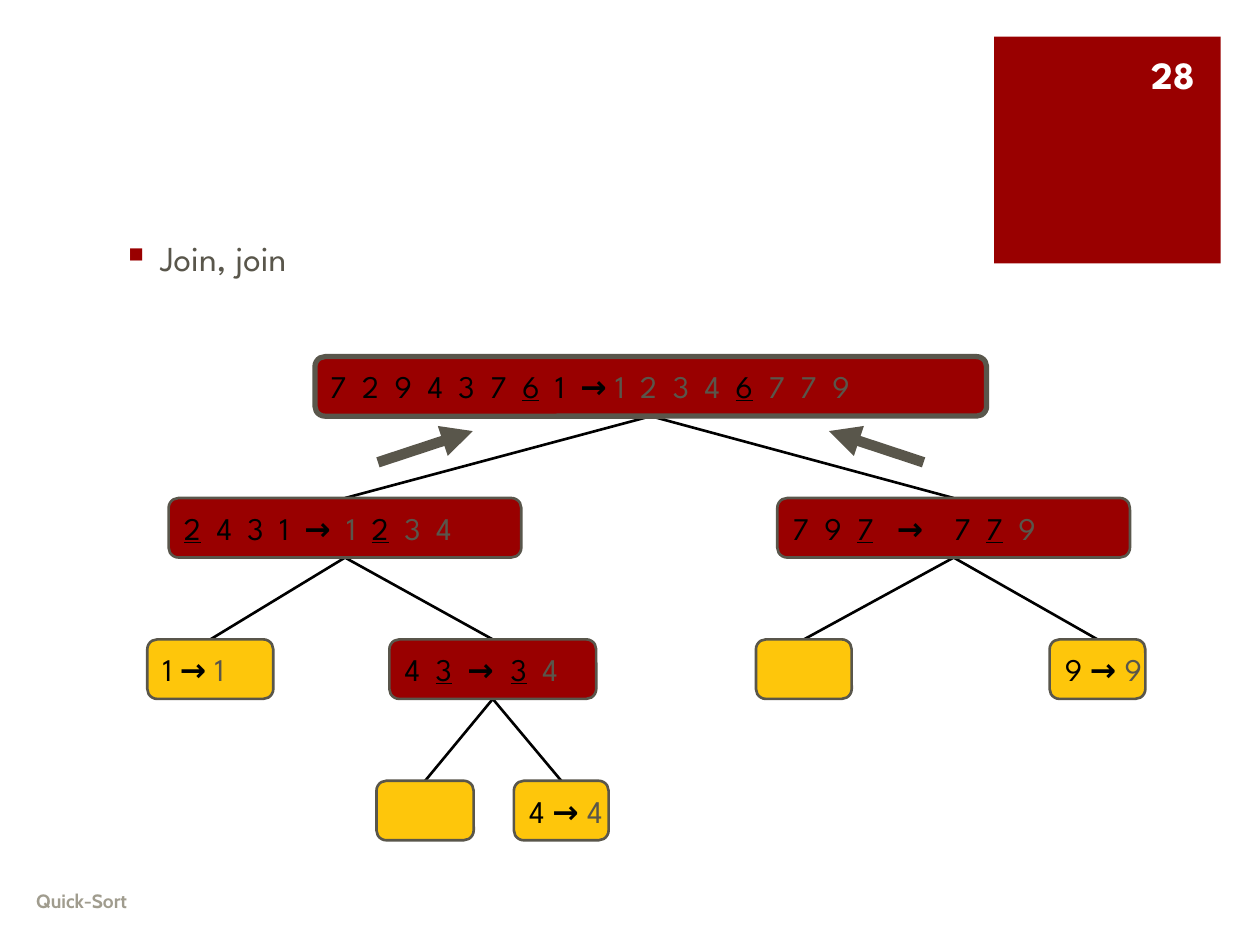
from lxml.etree import SubElement
from pptx import Presentation
from pptx.dml.color import RGBColor
from pptx.enum.shapes import MSO_CONNECTOR, MSO_SHAPE
from pptx.enum.text import MSO_ANCHOR, PP_ALIGN
from pptx.oxml.ns import qn
from pptx.util import Cm, Pt

RED = RGBColor(0x99, 0x00, 0x00)
GOLD = RGBColor(0xFE, 0xC6, 0x0B)
GREY = RGBColor(0x59, 0x56, 0x4B)
PALE = RGBColor(0xA0, 0x9C, 0x8E)
BLACK = RGBColor(0, 0, 0)
WHITE = RGBColor(0xFF, 0xFF, 0xFF)
BODY_FONT = "League Spartan"

# Tree layout in centimetres
ROW_STEP = 2.85
NODE_HEIGHT = 1.2

# Run formats inside the nodes
PLAIN = {"color": BLACK}
PIVOT = {"color": BLACK, "underline": True}
ARROW = {"color": BLACK, "bold": True}
SORTED = {"color": GREY}


def leaf(digit):
    return [(f"{digit} ", PLAIN), ("→ ", ARROW), (digit, SORTED)]


# Name: (parent, row, left, width, fill, runs)
NODES = {
    "root": (None, 0, 3.38, 13.54, RED, [
        ("7  2  9  4  3  7  ", PLAIN), ("6", PIVOT), ("  1  ", PLAIN), ("→ ", ARROW),
        ("1  2  3  4  ", SORTED), ("6", PIVOT), ("  7  7  9", SORTED)]),
    "low": ("root", 1, 0.43, 7.11, RED, [
        ("2", PIVOT), ("  4  3  1  ", PLAIN), ("→", ARROW), ("  1  ", SORTED),
        ("2", PIVOT), ("  3  4", SORTED)]),
    "high": ("root", 1, 12.7, 7.11, RED, [
        ("7  9  ", PLAIN), ("7", PIVOT), ("   ", PLAIN), ("→", ARROW),
        ("    7  ", PLAIN), ("7", PIVOT), ("  9", SORTED)]),
    "one": ("low", 2, 0, 2.54, GOLD, leaf("1")),
    "middle": ("low", 2, 4.88, 4.17, RED, [
        ("4  ", PLAIN), ("3", PIVOT), ("  ", PLAIN), ("→  ", ARROW),
        ("3", PIVOT), ("  4", SORTED)]),
    "high empty": ("high", 2, 12.27, 1.93, GOLD, []),
    "nine": ("high", 2, 18.19, 1.93, GOLD, leaf("9")),
    "middle empty": ("middle", 3, 4.62, 1.96, GOLD, []),
    "four": ("middle", 3, 7.39, 1.91, GOLD, leaf("4")),
}


def add_span(para, text, size=18, font=BODY_FONT, color=BLACK, bold=False, underline=False):
    span = para.add_run()
    span.text = text
    span.font.size = Pt(size)
    span.font.name = font
    span.font.color.rgb = color
    span.font.bold = bold
    span.font.underline = underline


def add_label(page, box, text, anchor=MSO_ANCHOR.MIDDLE, align=PP_ALIGN.LEFT, **style):
    frame = page.shapes.add_textbox(*map(Cm, box)).text_frame
    frame.word_wrap = True
    frame.vertical_anchor = anchor
    para = frame.paragraphs[0]
    para.alignment = align
    add_span(para, text, **style)
    return para


def add_panel(page, kind, box, fill):
    panel = page.shapes.add_shape(kind, *map(Cm, box))
    panel.shadow.inherit = False
    panel.fill.solid()
    panel.fill.fore_color.rgb = fill
    panel.line.fill.background()
    return panel


def add_line(page, start, end, color=BLACK, width=1.5, arrow=False):
    line = page.shapes.add_connector(MSO_CONNECTOR.STRAIGHT, *map(Cm, (*start, *end)))
    line.line.color.rgb = color
    line.line.width = Pt(width)
    if arrow:
        SubElement(line.line._get_or_add_ln(), qn("a:tailEnd"), type="triangle")
    SubElement(line._element.spPr, qn("a:effectLst"))


def add_page_frame(page, box):
    """Corner square with page number, and the footer."""
    left, top, width, height = box
    side = 4.57
    square_left = left + width - side
    add_panel(page, MSO_SHAPE.RECTANGLE, (square_left, top, side, side), RED)
    add_label(page, (square_left + 2.9, top + 0.25, 1.4, 1.02), "28",
              align=PP_ALIGN.RIGHT, size=22, color=WHITE, bold=True)
    add_label(page, (left, top + height - 1.02, 16.69, 1.02), "Quick-Sort",
              size=11, font="Cabin", color=PALE, bold=True)


def add_bullet_line(page, box, text):
    para = add_label(page, box, text, anchor=MSO_ANCHOR.TOP, size=20, color=GREY)
    para.space_before = Pt(18)
    props = para._p.get_or_add_pPr()
    props.set("marL", str(Cm(0.64)))
    props.set("indent", str(-Cm(0.64)))
    color = SubElement(props, qn("a:buClr"))
    SubElement(color, qn("a:srgbClr"), val=str(RED))
    SubElement(props, qn("a:buSzPct"), val="60000")
    SubElement(props, qn("a:buChar"), char="■")


def add_node(page, box, fill, runs, border):
    node = add_panel(page, MSO_SHAPE.ROUNDED_RECTANGLE, box, fill)
    node.adjustments[0] = 0.167
    node.line.color.rgb = GREY
    node.line.width = Pt(border)
    frame = node.text_frame
    frame.word_wrap = False
    frame.vertical_anchor = MSO_ANCHOR.MIDDLE
    para = frame.paragraphs[0]
    para.alignment = PP_ALIGN.LEFT
    for text, style in runs:
        add_span(para, text, **style)


def add_tree(page, box):
    """Recursion tree: edges first, nodes over them, then the join arrows."""
    left, top, width, _ = box
    boxes = {name: (left + x, top + row * ROW_STEP, node_width, NODE_HEIGHT)
             for name, (_, row, x, node_width, _, _) in NODES.items()}
    for name, (parent, *_) in NODES.items():
        if parent:
            px, py, pw, ph = boxes[parent]
            x, y, w, _ = boxes[name]
            add_line(page, (px + pw / 2, py + ph), (x + w / 2, y))
    for name, (parent, _, _, _, fill, runs) in NODES.items():
        add_node(page, boxes[name], fill, runs, border=1.5 if parent else 3)

    # Join arrows, mirrored about the centre of the root
    root_left, _, root_width, _ = boxes["root"]
    center = root_left + root_width / 2
    for side in (-1, 1):
        add_line(page, (center + side * 5.5, top + 2.13), (center + side * 3.59, top + 1.5),
                 color=GREY, width=6, arrow=True)


def main():
    deck = Presentation()
    deck.slide_width, deck.slide_height = Cm(25.4), Cm(19.05)
    page = deck.slides.add_slide(deck.slide_layouts[6])
    add_page_frame(page, (0.48, 0.74, 24.13, 17.93))
    add_bullet_line(page, (2.34, 4.65, 21.59, 1.9), "Join, join")
    add_tree(page, (2.97, 7.19, 20.12, 9.75))
    deck.save("out.pptx")


if __name__ == "__main__":
    main()
